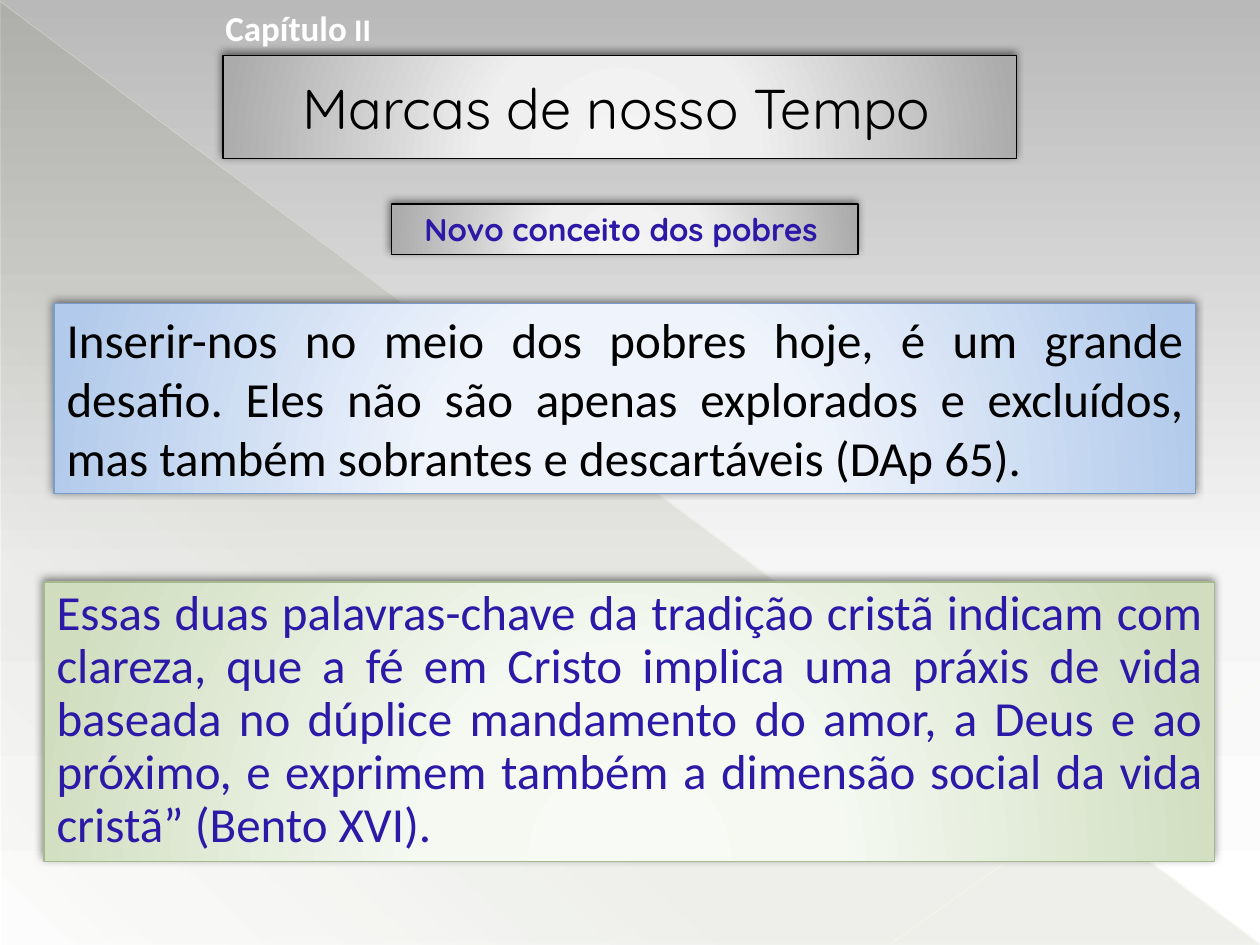
from pptx import Presentation as Deck
from pptx.dml.color import RGBColor as RGB
from pptx.enum.shapes import MSO_CONNECTOR as Conn, MSO_SHAPE as Kind
from pptx.enum.text import MSO_ANCHOR as Anchor, MSO_AUTO_SIZE as Fit, PP_ALIGN as Align
from pptx.oxml import parse_xml as parse
from pptx.oxml.ns import nsdecls, qn
from pptx.util import Pt

PX = 9144  # EMU in one px, at 100 px to the inch
HEX = {"black": "000000", "white": "FFFFFF", "violet": "2D19A7", "olive": "444D26",
       "cream": "FFFDE3", "ivory": "FFFDE6", "blue": "799DC9", "green": "A5B88E"}
SKY = [(0, "B9B9B9"), (60, "F6F6F6"), (100, "FFFFFF")]
VEIL = [(0, HEX["olive"], 10), (70, HEX["olive"], 8), (100, HEX["olive"], 1)]
GLOW = {"gray": ("F4F4F4", "EFEFEF", "ABABAB"),
        "blue": ("F2F7FE", "EFF4FC", "B2CAEB"),
        "green": ("F8FBF5", "F5F9F2", "D0DEBF")}
HALO = '<a:path path="circle"><a:fillToRect l="50000" t="155000" r="50000" b="-55000"/></a:path>'


def px(*nums):
    return [num * PX for num in nums]


def tint(code, alpha=100):
    return f'<a:srgbClr val="{code}"><a:alpha val="{alpha * 1000}"/></a:srgbClr>'


def slant(angle):
    return f'<a:lin ang="{angle * 60000}" scaled="0"/>'


def blend(item, fill, stops, course):
    """Fill with gradient stops (percent, hex, optional alpha) along a course."""
    fill.gradient()
    old = next(item.element.iter(qn("a:gradFill")))
    marks = "".join(f'<a:gs pos="{pos * 1000}">{tint(*hue)}</a:gs>' for pos, *hue in stops)
    old.getparent().replace(old, parse(
        f'<a:gradFill {nsdecls("a")} rotWithShape="1"><a:gsLst>{marks}</a:gsLst>{course}</a:gradFill>'))


def place(shape, box):
    for name, num in zip(("left", "top", "width", "height"), px(*box)):
        setattr(shape, name, num)


def panel(shape, glow, edge):
    """Give a shape its glowing fill, thin edge and soft shadow."""
    blend(shape, shape.fill, list(zip((0, 34, 100), GLOW[glow])), HALO)
    shape.line.color.rgb = RGB.from_string(HEX[edge])
    shape.line.width = Pt(0.75)
    shape.shadow.inherit = False
    shape.element.spPr.find(qn("a:effectLst")).append(parse(
        f'<a:outerShdw {nsdecls("a")} blurRad="{Pt(5)}" dist="{Pt(2)}" dir="{245 * 60000}" '
        f'rotWithShape="0">{tint(HEX["black"], 50)}</a:outerShdw>'))


def write(shape, runs, hue, face="Calibri", bold=False, anchor=Anchor.TOP,
          fit=Fit.SHAPE_TO_FIT_TEXT, **style):
    """Set runs of (text, size) in the one paragraph of a shape."""
    frame = shape.text_frame
    for name, val in {"word_wrap": True, "auto_size": fit, "vertical_anchor": anchor}.items():
        setattr(frame, name, val)
    para = frame.paragraphs[0]
    for name, val in {"alignment": Align.LEFT, **style}.items():
        setattr(para, name, val)
    for text, size in runs:
        run = para.add_run()
        run.text = text
        for name, val in {"size": Pt(size), "name": face, "bold": bold}.items():
            setattr(run.font, name, val)
        run.font.color.rgb = RGB.from_string(HEX[hue])
    return para


def block(slide, box, glow, edge):
    shape = slide.shapes.add_shape(Kind.RECTANGLE, *px(*box))
    panel(shape, glow, edge)
    return shape


def label(slide, box, runs, hue, **style):
    write(slide.shapes.add_textbox(*px(*box)), runs, hue, bold=True, **style)


def ray(slide, ends, hue, width, alpha):
    line = slide.shapes.add_connector(Conn.STRAIGHT, *px(*ends))
    line.line.color.rgb = RGB.from_string(HEX[hue])
    line.line.width = Pt(width)
    old = next(line.element.spPr.iter(qn("a:srgbClr")))
    old.append(parse(f'<a:alpha {nsdecls("a")} val="{alpha * 1000}"/>'))
    line.element.spPr.append(parse(f'<a:effectLst {nsdecls("a")}/>'))


def scene(slide):
    blend(slide, slide.background.fill, SKY, slant(90))
    veil = slide.shapes.add_shape(Kind.RIGHT_TRIANGLE, *px(1, 2, 999, 748))
    blend(veil, veil.fill, VEIL, slant(133))
    veil.line.fill.background()
    veil.shadow.inherit = False
    ray(slide, (0, 1, 999, 749), "cream", 0.39, 35)
    ray(slide, (1000, 541, 707, 749), "ivory", 0.47, 45)


def head(slide):
    title = slide.shapes.title
    slide.shapes.element.append(title.element)  # in front of the scene
    place(title, (177, 44, 630, 82))
    panel(title, "gray", "black")
    para = write(title, [("Marcas de nosso Tempo", 32)], "black", "Quicksand",
                 anchor=Anchor.MIDDLE, fit=Fit.NONE)
    props = para.runs[0].font and para._p.get_or_add_pPr()
    for name, num in {"marL": 53 * PX, "indent": 0}.items():
        props.set(name, str(num))


def main():
    deck = Deck()
    deck.slide_width, deck.slide_height = px(1000, 750)
    slide = deck.slides.add_slide(deck.slide_layouts[5])
    scene(slide)
    head(slide)
    label(slide, (169, 0, 260, 44), [("Capítulo", 20), (" II", 18)], "white")
    block(slide, (311, 162, 370, 40), "gray", "black")
    label(slide, (327, 162, 378, 40), [("Novo conceito dos pobres", 18)], "violet",
          face="Quicksand")
    write(block(slide, (43, 241, 906, 151), "blue", "blue"),
          [("Inserir-nos no meio dos pobres hoje, é um grande desafio. Eles não são apenas "
            "explorados e excluídos, mas também sobrantes e descartáveis (DAp 65).", 28)],
          "black", alignment=Align.JUSTIFY)
    write(block(slide, (35, 462, 929, 222), "green", "green"),
          [("Essas duas palavras-chave da tradição cristã indicam com clareza, que a fé em "
            "Cristo implica uma práxis de vida baseada no dúplice mandamento do amor, a Deus "
            "e ao próximo, e exprimem também a dimensão social da vida cristã” (Bento XVI).",
            28)],
          "violet", alignment=Align.JUSTIFY, line_spacing=0.9)
    deck.save("out.pptx")


if __name__ == "__main__":
    main()
